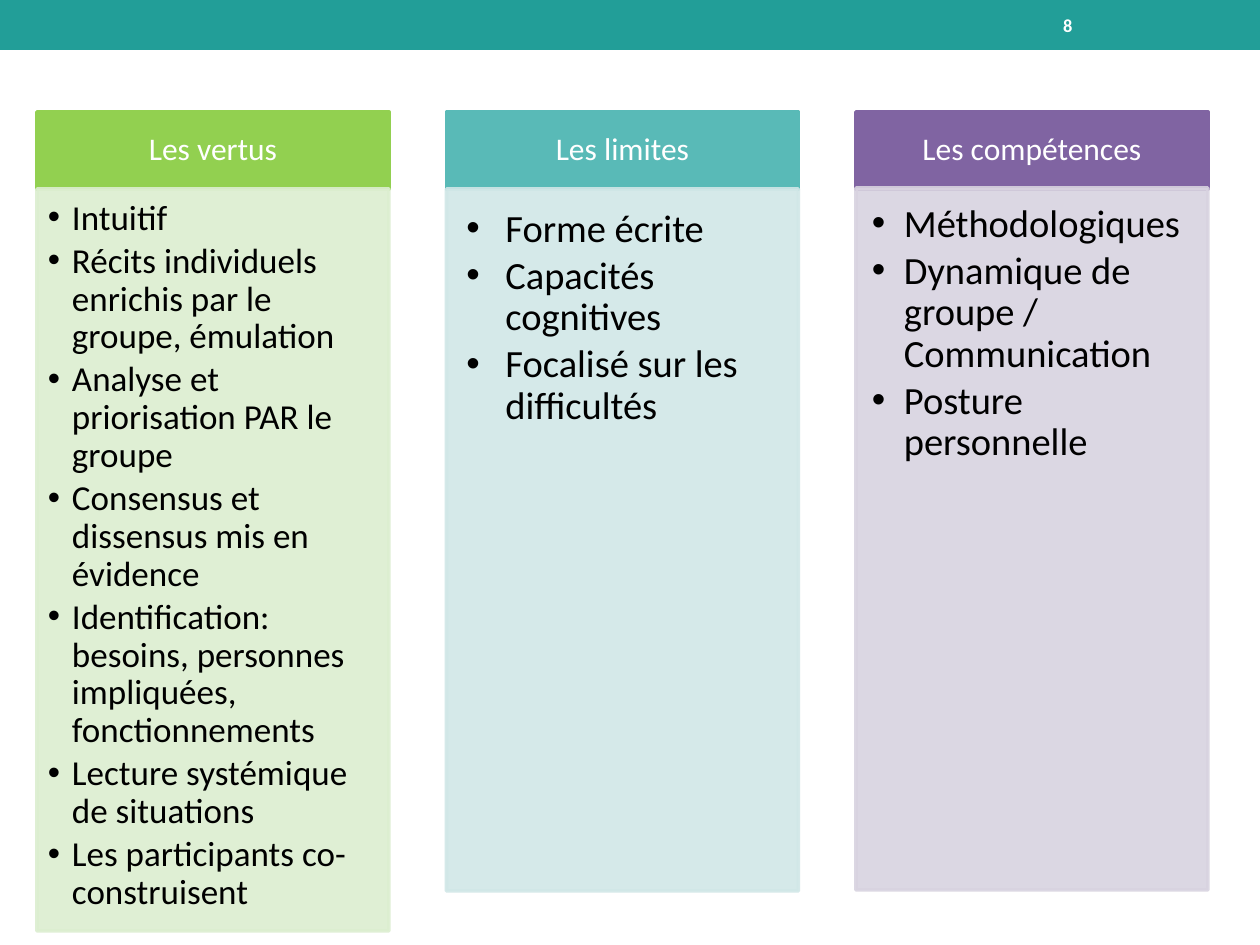
"""Build a slide with three columns: virtues, limits and skills."""
from lxml.etree import SubElement
from pptx import Presentation
from pptx.dml.color import RGBColor
from pptx.enum.shapes import MSO_SHAPE as Preset
from pptx.enum.text import MSO_ANCHOR as Anchor, PP_ALIGN as Align
from pptx.oxml.ns import qn
from pptx.util import Pt

PX = 914400 / 126
COLORS = {
    "band": "229E98", "white": "FFFFFF", "black": "000000",
    "green": "92D050", "pale green": "DCEED0",
    "teal": "59BAB7", "pale teal": "D1E7E7",
    "purple": "8064A2", "pale purple": "D8D3E0",
}
COLUMNS = [
    {"title": "Les vertus", "color": "green", "top": 189, "height": 742,
     "size": 20, "indent": 24, "insets": (11, 11, 15, 18),
     "items": ["Intuitif",
               "Récits individuels enrichis par le groupe, émulation",
               "Analyse et priorisation PAR le groupe",
               "Consensus et dissensus mis en évidence",
               "Identification: besoins, personnes impliquées, fonctionnements",
               "Lecture systémique de situations",
               "Les participants co-construisent"]},
    {"title": "Les limites", "color": "teal", "top": 189, "height": 702,
     "size": 22, "indent": 39, "insets": (20, 20, 28, 30),
     "items": ["Forme écrite", "Capacités cognitives",
               "Focalisé sur les difficultés"]},
    {"title": "Les compétences", "color": "purple", "top": 188, "height": 702,
     "size": 22, "indent": 32, "insets": (16, 16, 21, 24),
     "items": ["Méthodologiques", "Dynamique de groupe / Communication",
               "Posture personnelle"]},
]
LEFT, PITCH, WIDTH = 37, 409.5, 352
HEADER_TOP, HEADER_HEIGHT, HEADER_INSETS = 112, 77, (15, 9, 15, 9)
PAGE_INSETS = (13, 6, 13, 6)


def emu(px):
    return round(px * PX)


def rgb(name):
    return RGBColor.from_string(COLORS[name])


def set_all(target, **values):
    for name, value in values.items():
        setattr(target, name, value)


def add_box(slide, box, color, outlined=True, alpha=None):
    shape = slide.shapes.add_shape(Preset.RECTANGLE, *map(emu, box))
    shape.shadow.inherit = False
    shape.fill.solid()
    shape.fill.fore_color.rgb = rgb(color)
    if outlined:
        shape.line.color.rgb = rgb(color)
        shape.line.width = Pt(2.08)
    else:
        shape.line.fill.background()
    if alpha:
        for element in shape._element.spPr.iter(qn("a:srgbClr")):
            SubElement(element, qn("a:alpha"), val=str(alpha * 1000))
    return shape


def write(shape, lines, insets, anchor, font, **layout):
    frame = shape.text_frame
    sides = ("margin_left", "margin_top", "margin_right", "margin_bottom")
    set_all(frame, word_wrap=True, vertical_anchor=anchor,
            **dict(zip(sides, map(emu, insets))))
    frame.text = "\n".join(lines)
    for paragraph in frame.paragraphs:
        set_all(paragraph, **layout)
        run_font = paragraph.runs[0].font
        set_all(run_font, name="Calibri", size=Pt(font["size"]),
                bold=font.get("bold", False))
        run_font.color.rgb = rgb(font["color"])
    return frame.paragraphs


def add_bullet(paragraph, indent):
    properties = paragraph._p.get_or_add_pPr()
    properties.set("marL", str(emu(indent)))
    properties.set("indent", str(-emu(indent)))
    SubElement(properties, qn("a:buFont"), typeface="Arial")
    SubElement(properties, qn("a:buChar"), char="•")


def add_column(slide, left, column):
    color = column["color"]
    header = add_box(slide, (left, HEADER_TOP, WIDTH, HEADER_HEIGHT), color)
    write(header, [column["title"]], HEADER_INSETS, Anchor.MIDDLE,
          {"size": 18, "color": "white"},
          alignment=Align.CENTER, line_spacing=0.9)
    body = add_box(slide, (left, column["top"], WIDTH, column["height"]),
                   f"pale {color}", alpha=90)
    paragraphs = write(body, column["items"], column["insets"], Anchor.TOP,
                       {"size": column["size"], "color": "black"},
                       alignment=Align.LEFT, line_spacing=0.9,
                       space_after=Pt(3), level=1)
    for paragraph in paragraphs:
        add_bullet(paragraph, column["indent"])


def main():
    presentation = Presentation()
    set_all(presentation, slide_width=emu(1260), slide_height=emu(945))
    slide = presentation.slides.add_slide(presentation.slide_layouts[6])
    add_box(slide, (0, 0, 1260, 50), "band", outlined=False)
    page_number = slide.shapes.add_textbox(*map(emu, (1050, 3, 147, 45)))
    write(page_number, ["8"], PAGE_INSETS, Anchor.MIDDLE,
          {"size": 10.5, "color": "white", "bold": True})
    for index, column in enumerate(COLUMNS):
        add_column(slide, LEFT + index * PITCH, column)
    presentation.save("out.pptx")


if __name__ == "__main__":
    main()
